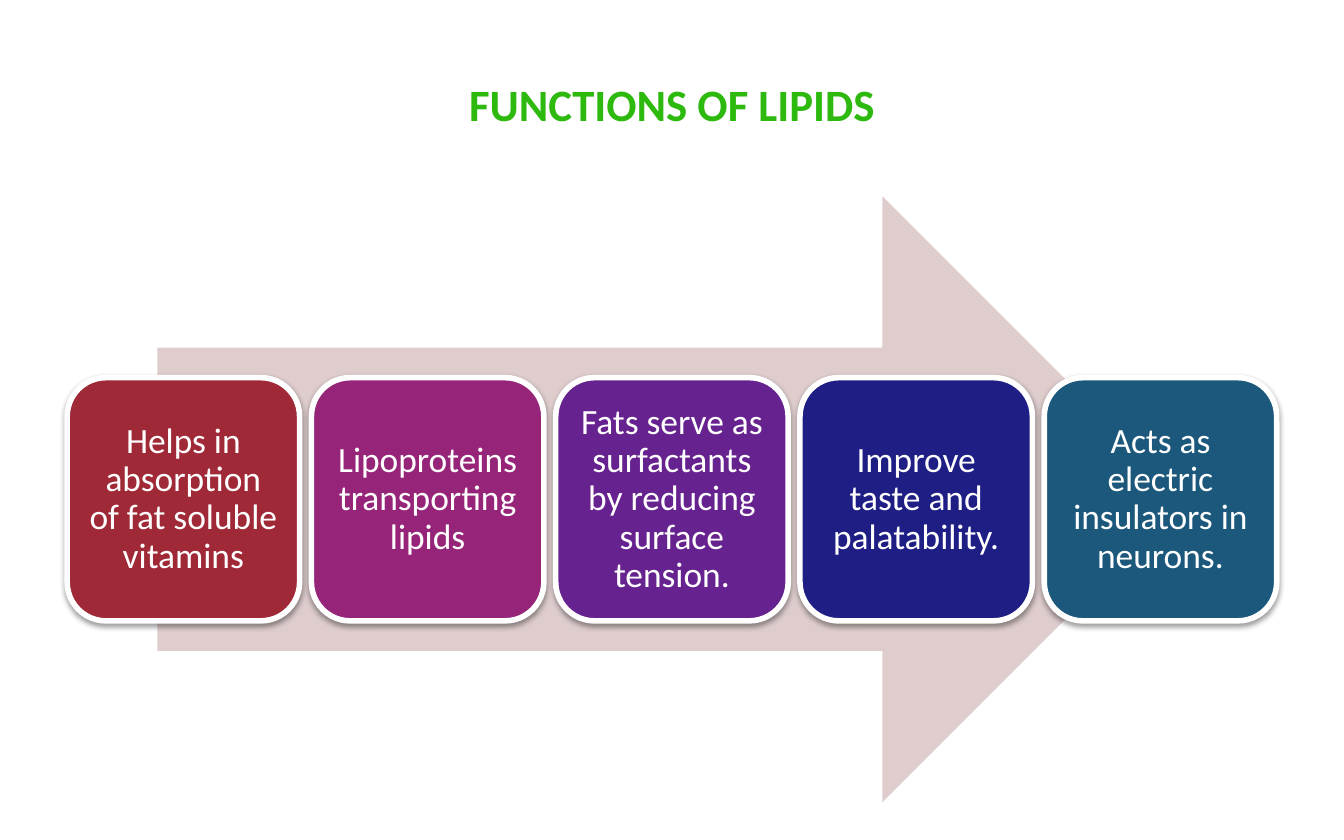
"""Build a slide showing the functions of lipids as five cards on an arrow."""
import lxml.etree
import pptx
import pptx.dml.color
import pptx.enum.shapes
import pptx.enum.text
import pptx.oxml.ns
import pptx.util

Inches = pptx.util.Inches
Pt = pptx.util.Pt
RGBColor = pptx.dml.color.RGBColor
Shape = pptx.enum.shapes.MSO_SHAPE

WHITE = RGBColor(0xFF, 0xFF, 0xFF)
GREEN = RGBColor(0x2D, 0xB9, 0x0E)
ROSE = RGBColor(0xDF, 0xCD, 0xCE)
RED = RGBColor(0x9F, 0x29, 0x36)
MAGENTA = RGBColor(0x96, 0x25, 0x79)
PURPLE = RGBColor(0x66, 0x22, 0x8E)
NAVY = RGBColor(0x1E, 0x1E, 0x85)
TEAL = RGBColor(0x1B, 0x58, 0x7C)

TITLE = "FUNCTIONS OF LIPIDS"
FUNCTIONS = [
    ("Helps in absorption of fat soluble vitamins", RED),
    ("Lipoproteins transporting lipids", MAGENTA),
    ("Fats serve as surfactants by reducing surface tension.", PURPLE),
    ("Improve taste and palatability.", NAVY),
    ("Acts as electric insulators in neurons.", TEAL),
]

TITLE_FONT = {"name": "Calibri", "size": Pt(24), "bold": True}
CARD_FONT = {"name": "Calibri", "size": Pt(19), "bold": False}
CARD_MARGINS = {
    f"margin_{side}": Inches(0.08) for side in ("left", "top", "right", "bottom")
}
FRAME_FORMAT = {
    "word_wrap": True,
    "vertical_anchor": pptx.enum.text.MSO_ANCHOR.MIDDLE,
}
SHADOW = {"blurRad": Pt(3.1), "dist": Pt(1.6), "dir": 90 * 60000, "rotWithShape": 0}
SHADOW_ALPHA = 38000

LEFT, CONTENT_WIDTH = 0.5, 9
CARD_TOP, CARD_WIDTH, CARD_HEIGHT = 2.81, 1.73, 1.81
CARD_STEP = (CONTENT_WIDTH - CARD_WIDTH) / (len(FUNCTIONS) - 1)


def apply_format(target, values):
    for name, value in values.items():
        setattr(target, name, value)


def write_text(shape, text, font, color, line_spacing=1.0):
    frame = shape.text_frame
    apply_format(frame, FRAME_FORMAT)
    paragraph = frame.paragraphs[0]
    paragraph.alignment = pptx.enum.text.PP_ALIGN.CENTER
    paragraph.line_spacing = line_spacing
    run = paragraph.add_run()
    run.text = text
    apply_format(run.font, font)
    run.font.color.rgb = color


def add_filled_shape(slide, kind, box, color):
    shape = slide.shapes.add_shape(kind, *map(Inches, box))
    shape.shadow.inherit = False
    shape.fill.solid()
    shape.fill.fore_color.rgb = color
    return shape


def add_shadow(shape):
    qn = pptx.oxml.ns.qn
    effects = shape.element.spPr.find(qn("a:effectLst"))
    outer = lxml.etree.SubElement(effects, qn("a:outerShdw"))
    for name, value in SHADOW.items():
        outer.set(name, str(value))
    color = lxml.etree.SubElement(outer, qn("a:srgbClr"), val="000000")
    lxml.etree.SubElement(color, qn("a:alpha"), val=str(SHADOW_ALPHA))


def add_card(slide, index, text, color):
    box = (LEFT + index * CARD_STEP, CARD_TOP, CARD_WIDTH, CARD_HEIGHT)
    card = add_filled_shape(slide, Shape.ROUNDED_RECTANGLE, box, color)
    card.line.color.rgb = WHITE
    card.line.width = Pt(3)
    add_shadow(card)
    apply_format(card.text_frame, CARD_MARGINS)
    write_text(card, text, CARD_FONT, WHITE, 0.9)


def main():
    presentation = pptx.Presentation()
    presentation.slide_width = Inches(10)
    presentation.slide_height = Inches(6.25)
    slide = presentation.slides.add_slide(presentation.slide_layouts[6])

    arrow = add_filled_shape(slide, Shape.RIGHT_ARROW, (1.17, 1.46, 7.65, 4.51), ROSE)
    arrow.line.fill.background()
    for index, (text, color) in enumerate(FUNCTIONS):
        add_card(slide, index, text, color)

    title_box = map(Inches, (LEFT, 0.25, CONTENT_WIDTH, 1.04))
    title = slide.shapes.add_textbox(*title_box)
    write_text(title, TITLE, TITLE_FONT, GREEN)

    presentation.save("out.pptx")


if __name__ == "__main__":
    main()
